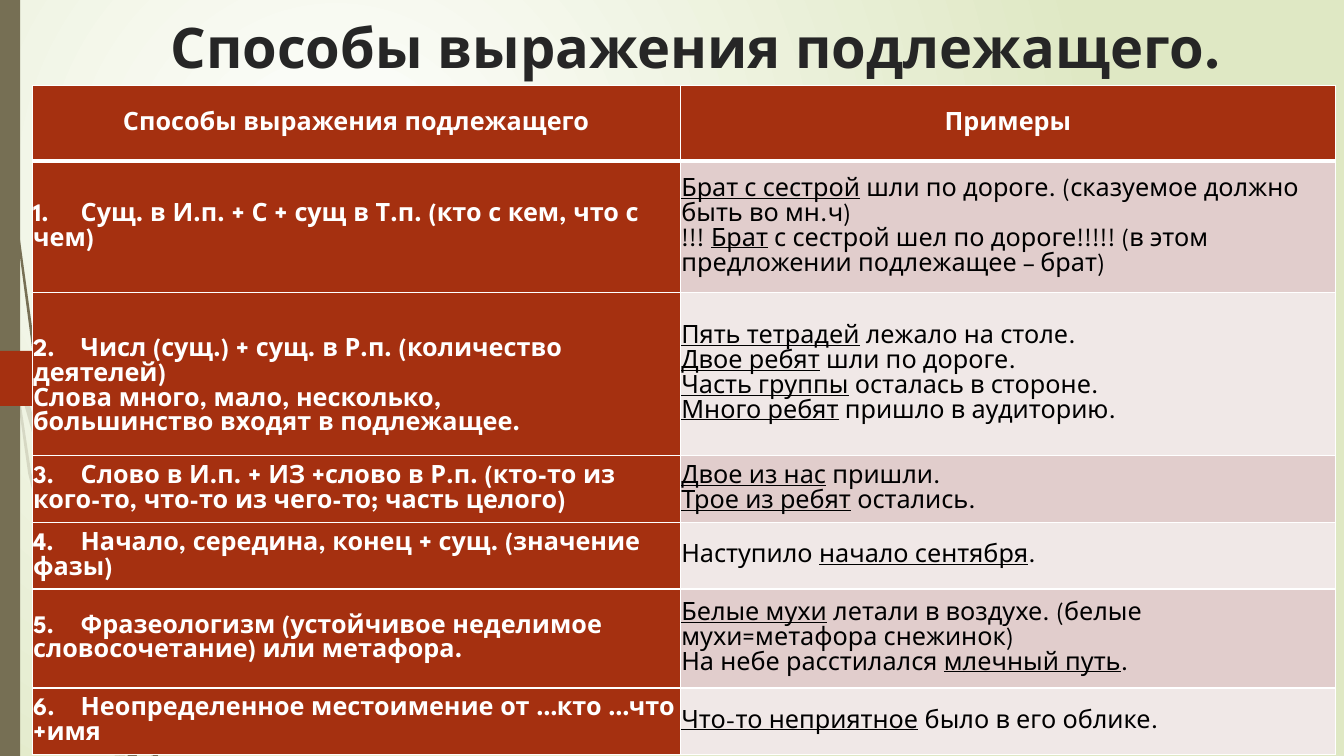
from lxml import etree
from pptx import Presentation
from pptx.dml.color import RGBColor
from pptx.enum.shapes import MSO_SHAPE
from pptx.enum.text import MSO_ANCHOR, PP_ALIGN
from pptx.oxml.ns import qn
from pptx.util import Pt

RECTANGLE, PENTAGON = MSO_SHAPE.RECTANGLE, MSO_SHAPE.PENTAGON
MIDDLE, BOTTOM = MSO_ANCHOR.MIDDLE, MSO_ANCHOR.BOTTOM
CENTER, LEFT = PP_ALIGN.CENTER, PP_ALIGN.LEFT

WHITE = RGBColor(0xFF, 0xFF, 0xFF)
BLACK = RGBColor(0, 0, 0)
PALE_GREEN = RGBColor(0xDF, 0xE8, 0xC4)
OLIVE = RGBColor(0x76, 0x6F, 0x54)
RUST = RGBColor(0xA5, 0x30, 0x10)
TITLE_GRAY = RGBColor(0x26, 0x26, 0x26)
PINK = RGBColor(0xE1, 0xCD, 0xCC)
PALE_PINK = RGBColor(0xF0, 0xE8, 0xE7)
FONT = "League Spartan"
NBSP = chr(160)

LIGHT_STEMS = [
    [(41.8, 375.8), (60.5, 432), (61.2, 422.6), (44.6, 374.4), (10.1, 248.4), (12.2, 270.7)],
    [(66.2, 437), (63.4, 429.1), (63.4, 439.2), (88.6, 499.7), (108, 540), (111.6, 540),
     (91.4, 498.2)],
    [(85.7, 540), (89.3, 540), (75.6, 511.9)],
    [(66.9, 491.8), (50.4, 445.7), (22.3, 337.7), (12.2, 270.7), (7.9, 252), (20.2, 338.4),
     (46.8, 447.1), (66.2, 499), (72.7, 514.1)],
    [(72.7, 514.1), (82.1, 540), (85.7, 540)],
    [(69.1, 498.2), (67, 491.8), (72.7, 514.1), (85.7, 540), (75.6, 511.9)],
]
DARK_STEMS = [
    [(2.2, 0), (2.9, 34.6), (5, 79.2), (12.2, 167.8), (23.8, 255.6), (40.3, 343.4), (41, 346.3),
     (39.6, 326.2), (25.9, 255.6), (13.7, 167), (5.8, 78.5), (3.6, 34.6), (2.9, 0)],
    [(81.4, 467.3), (79.2, 461.5), (79.9, 472.3), (95, 509.8), (109.4, 540), (113, 540),
     (97.9, 508.3)],
    [(95.8, 540), (97.9, 540), (87.8, 517.7)],
    [(84.2, 519.8), (91.4, 540), (94.3, 540)],
    [(83.5, 508.3), (79.2, 497.5), (84.2, 519.8), (93.6, 540), (95.8, 540), (87.8, 517.7)],
]

ROWS = [
    (54, "Способы выражения подлежащего", "Примеры"),
    (93.6, "1.\tСущ. в И.п. +~С~+ сущ в Т.п. (кто с кем, что с чем)",
     "|Брат с сестрой|~шли по дороге. (сказуемое должно быть во мн.ч)\n"
     "!!!~|Брат|~с сестрой шел по дороге!!!!! (в этом предложении подлежащее – брат)"),
    (116.6, "2.\tЧисл (сущ.) + сущ. в Р.п. (количество деятелей)\n"
     "Слова~много, мало, несколько, большинство~входят в подлежащее.",
     "|Пять тетрадей|~лежало на столе.\n|Двое ребят|~шли по дороге.\n"
     "|Часть группы|~осталась в стороне.\n|Много ребят|~пришло в аудиторию."),
    (46.8, "3.\tСлово в И.п. +~ИЗ~+слово в Р.п. (кто-то из кого-то, что-то из чего-то;~часть целого)",
     "|Двое из нас|~пришли.\n|Трое из ребят|~остались."),
    (46.8, "4.\tНачало, середина, конец + сущ. (значение фазы)",
     "Наступило~|начало сентября|."),
    (70.6, "5.\tФразеологизм (устойчивое неделимое словосочетание) или метафора.",
     "|Белые мухи|~летали в воздухе.~(белые мухи=метафора снежинок)\n"
     "На небе расстилался~|млечный путь|."),
    (46.8, "6.\tНеопределенное местоимение от …кто …что +имя",
     "|Что-то неприятное|~было в его облике."),
]


def paint(shape, color):
    shape.shadow.inherit = False
    shape.fill.solid()
    shape.fill.fore_color.rgb = color
    shape.line.fill.background()


def style(r, size, color, bold):
    r.font.name = FONT
    r.font.size = Pt(size)
    r.font.color.rgb = color
    r.font.bold = bold


prs = Presentation()
prs.slide_width, prs.slide_height = Pt(960), Pt(540)
s = prs.slides.add_slide(prs.slide_layouts[6])

bg = s.background.fill
bg.gradient()
for stop, color in zip(bg.gradient_stops, (WHITE, PALE_GREEN)):
    stop.color.rgb = color
lin = next(s.background._cSld.iter(qn("a:lin")))
grad = lin.getparent()
circle = etree.Element(qn("a:path"), {"path": "circle"})
etree.SubElement(circle, qn("a:fillToRect"), l="50000", t="50000", r="100000", b="100000")
grad.replace(lin, circle)

for stems, opacity in ((LIGHT_STEMS, 20), (DARK_STEMS, 100)):
    for points in stems:
        outline = [(Pt(x), Pt(y)) for x, y in points]
        builder = s.shapes.build_freeform(*outline[0])
        builder.add_line_segments(outline[1:], close=True)
        stem = builder.convert_to_shape()
        paint(stem, OLIVE)
        if opacity < 100:
            clr = stem._element.spPr.find(qn("a:solidFill"))[0]
            etree.SubElement(clr, qn("a:alpha"), val=str(opacity * 1000))

bar = s.shapes.add_shape(RECTANGLE, 0, 0, Pt(14.4), Pt(540))
paint(bar, OLIVE)
arrow = s.shapes.add_shape(PENTAGON, 0, Pt(250.6), Pt(125), Pt(39.4))
paint(arrow, RUST)

title = s.shapes.add_textbox(Pt(72.7), 0, Pt(848.9), Pt(60.5))
tf = title.text_frame
tf.word_wrap = True
tf.vertical_anchor = BOTTOM
tf.text = "Способы выражения подлежащего."
p = tf.paragraphs[0]
p.alignment = CENTER
style(p.runs[0], 40, TITLE_GRAY, True)

table = s.shapes.add_table(len(ROWS), 2, Pt(23), Pt(61.2), Pt(931), Pt(475.2)).table
table.columns[0].width, table.columns[1].width = Pt(463), Pt(468)
for i, (height, *texts) in enumerate(ROWS):
    table.rows[i].height = Pt(height)
    for j, text in enumerate(texts):
        cell = table.cell(i, j)
        cell.vertical_anchor = MIDDLE
        cell.margin_left = cell.margin_right = cell.margin_top = cell.margin_bottom = Pt(0.7)
        if (i, j) == (2, 0):
            cell.margin_top = Pt(18.6)
        dark = i == 0 or j == 0
        tcPr = cell._tc.get_or_add_tcPr()
        for side in ("lnL", "lnR", "lnT", "lnB"):
            thick = (i, side) in ((0, "lnB"), (1, "lnT"))
            ln = etree.SubElement(tcPr, qn("a:" + side), w=str(Pt(3 if thick else 1)))
            solid = etree.SubElement(ln, qn("a:solidFill"))
            etree.SubElement(solid, qn("a:srgbClr"), val=str(WHITE))
        cell.fill.solid()
        cell.fill.fore_color.rgb = RUST if dark else PINK if i % 2 else PALE_PINK

        p = cell.text_frame.paragraphs[0]
        if "\t" in text:
            tabs = etree.SubElement(p._p.get_or_add_pPr(), qn("a:tabLst"))
            etree.SubElement(tabs, qn("a:tab"), pos=str(Pt(34)), algn="l")
        p.alignment = CENTER if i == 0 else LEFT
        p.line_spacing = 1.07
        for k, part in enumerate(text.replace("~", NBSP).split("|")):
            for n, line in enumerate(part.split("\n")):
                if n:
                    p.add_line_break()
                if line:
                    r = p.add_run()
                    r.text = line
                    style(r, 18, WHITE if dark else BLACK, dark)
                    r.font.underline = k % 2 == 1

prs.save("out.pptx")
